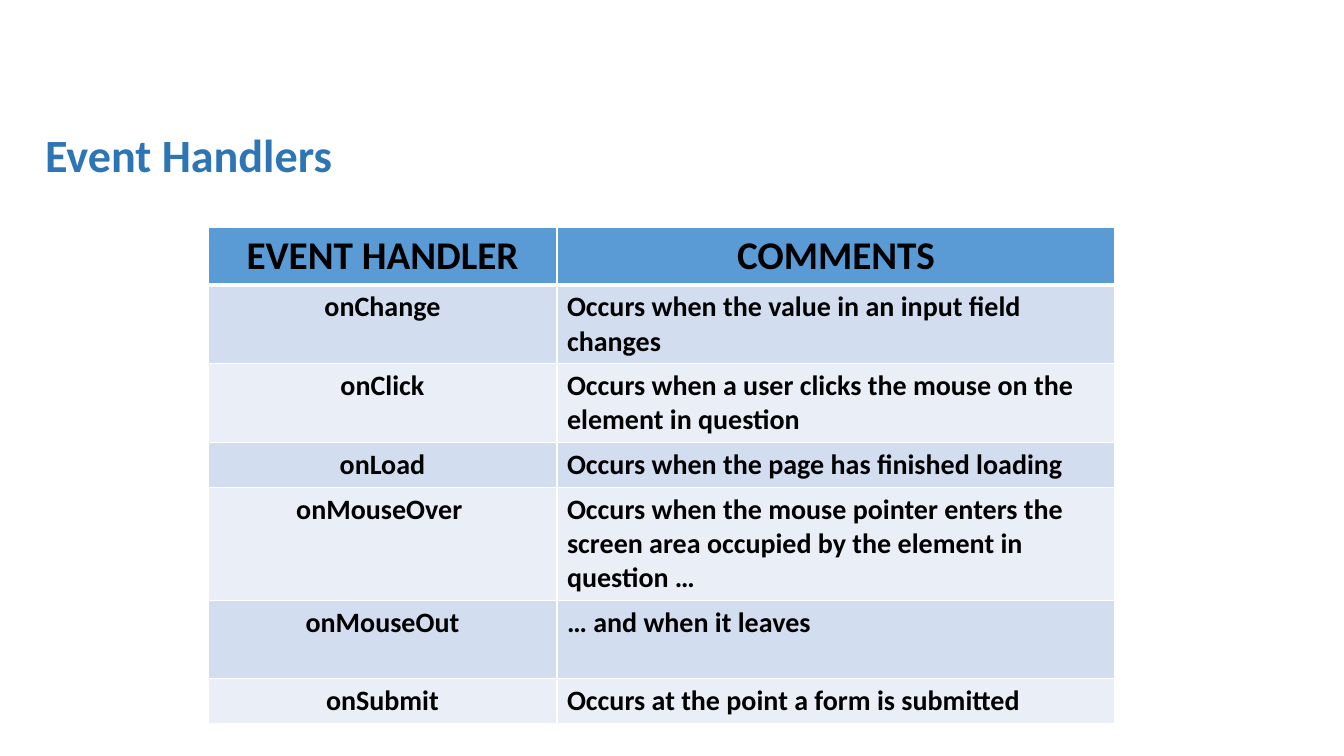
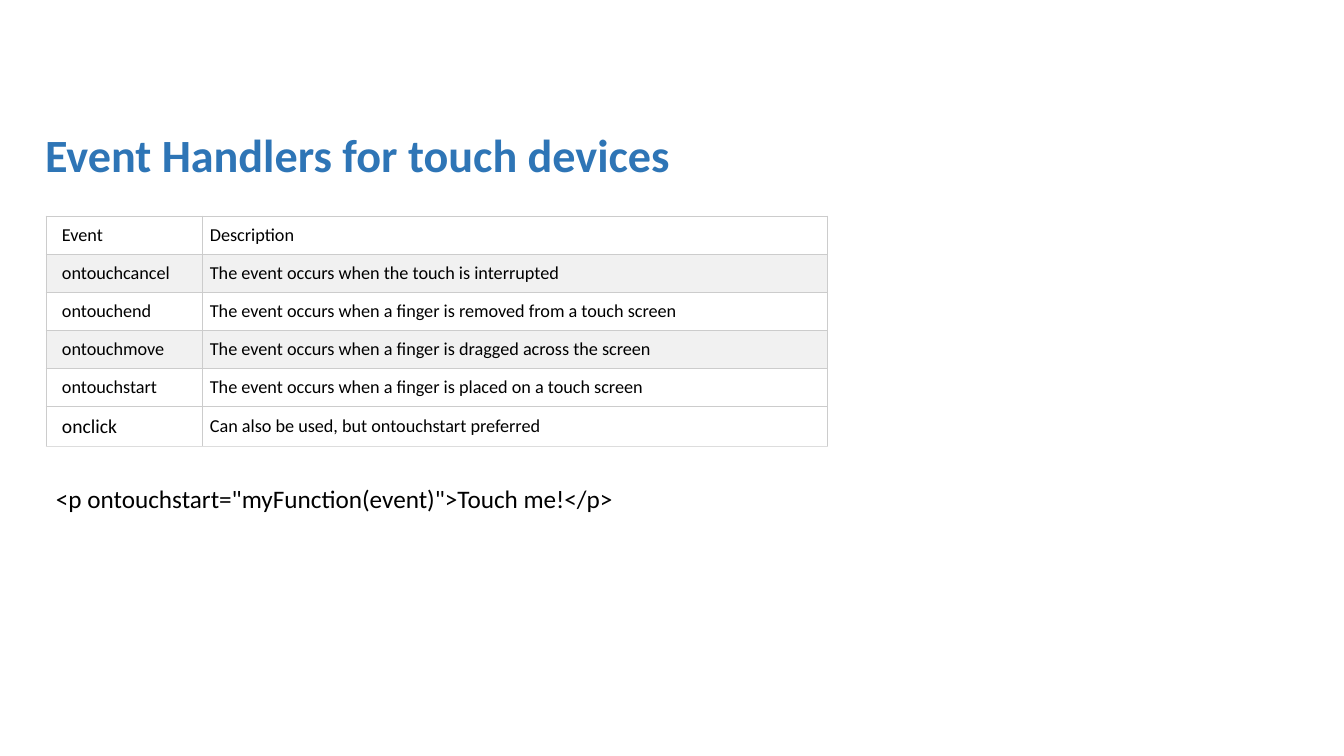
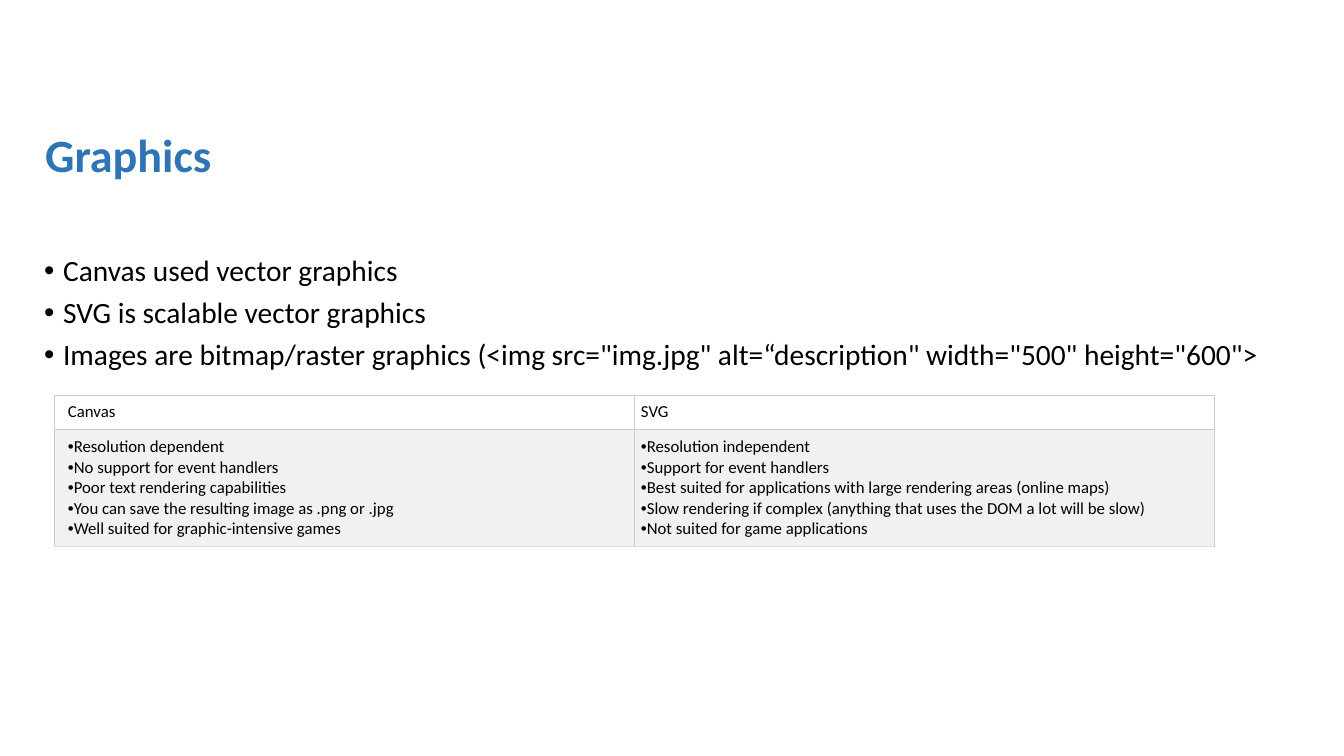
import pptx
import pptx.util
import pptx.dml.color
import pptx.enum.text
import pptx.oxml.ns
from lxml import etree

FONT = "Calibri"
BLUE, BLACK, WHITE = "2E75B6", "000000", "FFFFFF"
HEAD, BANDS = "5B9BD5", ("EAEFF7", "D2DEEF")
GREY, RULE, BASE = "F1F1F1", "CCCCCC", "DDDDDD"
TITLE = (35, 108, 1278, 100)
ALIGN = pptx.enum.text.PP_ALIGN
ANCHOR = pptx.enum.text.MSO_ANCHOR
FIT = pptx.enum.text.MSO_AUTO_SIZE

HANDLERS = [
    ("EVENT HANDLER", "COMMENTS"),
    ("onChange", "Occurs when the value in an input field changes"),
    ("onClick", "Occurs when a user clicks the mouse on the element in question"),
    ("onLoad", "Occurs when the page has finished loading"),
    ("onMouseOver ", "Occurs when the mouse pointer enters the screen area "
     "occupied by the element in question …"),
    ("onMouseOut", "… and when it leaves"),
    ("onSubmit", "Occurs at the point a form is submitted"),
]
TOUCH = [
    ("Event", "Description"),
    ("ontouchcancel", "The event occurs when the touch is interrupted"),
    ("ontouchend", "The event occurs when a finger is removed from a touch screen"),
    ("ontouchmove", "The event occurs when a finger is dragged across the screen"),
    ("ontouchstart", "The event occurs when a finger is placed on a touch screen"),
    ("onclick", "Can also be used, but ontouchstart preferred"),
]
POINTS = [
    "Canvas used vector graphics",
    "SVG is scalable vector graphics",
    "Images are bitmap/raster graphics (<img src=\"img.jpg\" "
    "alt=“description\" width=\"500\" height=\"600\">",
]
COMPARE = [
    ("Canvas", "SVG"),
    (["Resolution dependent",
      "No support for event handlers",
      "Poor text rendering capabilities",
      "You can save the resulting image as .png or .jpg",
      "Well suited for graphic-intensive games"],
     ["Resolution independent",
      "Support for event handlers",
      "Best suited for applications with large rendering areas (online maps)",
      "Slow rendering if complex (anything that uses the DOM a lot will be slow)",
      "Not suited for game applications"]),
]


def px(num):
    """Turn pixels into EMU."""
    return pptx.util.Emu(round(num * 914400 / 100.8))


def rgb(code):
    """Turn a hex string into a colour."""
    return pptx.dml.color.RGBColor.from_string(code)


def add(parent, tag, **attrs):
    """Append a drawing element to its parent."""
    return etree.SubElement(parent, pptx.oxml.ns.qn("a:" + tag), attrs)


def place(shape, box):
    """Move a shape to a box in pixels."""
    shape.left, shape.top, shape.width, shape.height = map(px, box)


def style(para, size, color=BLACK, bold=False):
    """Set the font of a paragraph."""
    font = para.font
    font.name, font.size, font.bold = FONT, pptx.util.Pt(size), bold
    font.color.rgb = rgb(color)


def bullet(para, hang=0):
    """Give a paragraph a round bullet with a hanging indent."""
    prop = para._p.get_or_add_pPr()
    prop.set("marL", str(px(hang)))
    prop.set("indent", str(-px(hang)))
    add(prop, "buFont", typeface="Arial")
    add(prop, "buChar", char="•")


def fill_text(frame, lines):
    """Write one paragraph per line and return the paragraphs."""
    frame.text = "\n".join(lines)
    return frame.paragraphs


def edge(cell, side, color, width):
    """Draw one border of a cell."""
    prop = cell._tc.get_or_add_tcPr()
    line = add(prop, "ln" + side, w=str(pptx.util.Pt(width)))
    add(add(line, "solidFill"), "srgbClr", val=color)


def grid(slide, spot, cols, rows, data):
    """Add a plain table of text and return it."""
    shape = slide.shapes.add_table(
        len(rows), len(cols), *map(px, (*spot, sum(cols), sum(rows))))
    table = shape.table
    table.first_row = table.horz_banding = False
    for col, width in zip(table.columns, cols):
        col.width = px(width)
    for row, high, texts in zip(table.rows, rows, data):
        row.height = px(high)
        for cell, text in zip(row.cells, texts):
            many = isinstance(text, list)
            for para in fill_text(cell.text_frame, text if many else [text]):
                if many:
                    bullet(para)
    return table


def bold_table(slide, spot, cols, rows, data):
    """Add a table with a blue header and blue bands."""
    table = grid(slide, spot, cols, rows, data)
    for r, row in enumerate(table.rows):
        for c, cell in enumerate(row.cells):
            for side in "LRTB":
                thick = (r, side) in ((0, "B"), (1, "T"))
                edge(cell, side, WHITE, 3 if thick else 1)
            cell.fill.solid()
            cell.fill.fore_color.rgb = rgb(BANDS[r % 2] if r else HEAD)
            para = cell.text_frame.paragraphs[0]
            if r == 0 or c == 0:
                para.alignment = ALIGN.CENTER
            style(para, 20 if r else 28, bold=True)


def ruled_table(slide, spot, cols, rows, data, size, pad, grey):
    """Add a thinly ruled table with some grey rows and return it."""
    table = grid(slide, spot, cols, rows, data)
    last = len(rows) - 1
    for r, row in enumerate(table.rows):
        for c, cell in enumerate(row.cells):
            for side in "LRTB":
                edge(cell, side, BASE if (r, side) == (last, "B") else RULE, 0.75)
            cell.fill.solid()
            cell.fill.fore_color.rgb = rgb(GREY if r in grey else WHITE)
            cell.margin_left = px(pad if c else 2 * pad)
            cell.margin_right = cell.margin_top = cell.margin_bottom = px(pad)
            for para in cell.text_frame.paragraphs:
                style(para, size)
    return table


def start(deck, name, layout):
    """Add a slide with its title."""
    slide = deck.slides.add_slide(deck.slide_layouts[layout])
    title = slide.shapes.title
    place(title, TITLE)
    frame = title.text_frame
    frame.auto_size = FIT.NONE
    frame.vertical_anchor = ANCHOR.MIDDLE
    para = fill_text(frame, [name])[0]
    para.alignment, para.line_spacing = ALIGN.LEFT, 0.9
    style(para, 33, BLUE, True)
    return slide


def points(slide, box, lines):
    """Fill the body placeholder with a bulleted list."""
    body = slide.placeholders[1]
    place(body, box)
    frame = body.text_frame
    frame.auto_size = FIT.NONE
    for i, para in enumerate(fill_text(frame, lines)):
        bullet(para, 19)
        para.line_spacing = 0.9
        para.space_before = pptx.util.Pt(7.5 if i else 0)
        style(para, 21)


def note(slide, box, text):
    """Add a line of text in a box."""
    frame = slide.shapes.add_textbox(*map(px, box)).text_frame
    frame.word_wrap = True
    style(fill_text(frame, [text])[0], 18)


def main():
    """Build the slides and save them."""
    deck = pptx.Presentation()
    deck.slide_width, deck.slide_height = px(1344), px(756)

    slide = start(deck, "Event Handlers", 5)
    bold_table(slide, (208, 227), (349, 558),
               (58, 78, 78, 45, 113, 78, 45), HANDLERS)

    slide = start(deck, "Event Handlers for touch devices", 5)
    table = ruled_table(slide, (46, 216), (156, 626),
                        (38,) * 5 + (40,), TOUCH, 13, 8, (1, 3))
    style(table.cell(5, 0).text_frame.paragraphs[0], 14)
    note(slide, (46, 478, 782, 40),
         "<p ontouchstart=\"myFunction(event)\">Touch me!</p>")

    slide = start(deck, "Graphics", 1)
    points(slide, (34, 251, 1278, 455), POINTS)
    ruled_table(slide, (54, 395), (580, 580), (35, 117), COMPARE, 12, 7, (1,))

    deck.save("out.pptx")


if __name__ == "__main__":
    main()
